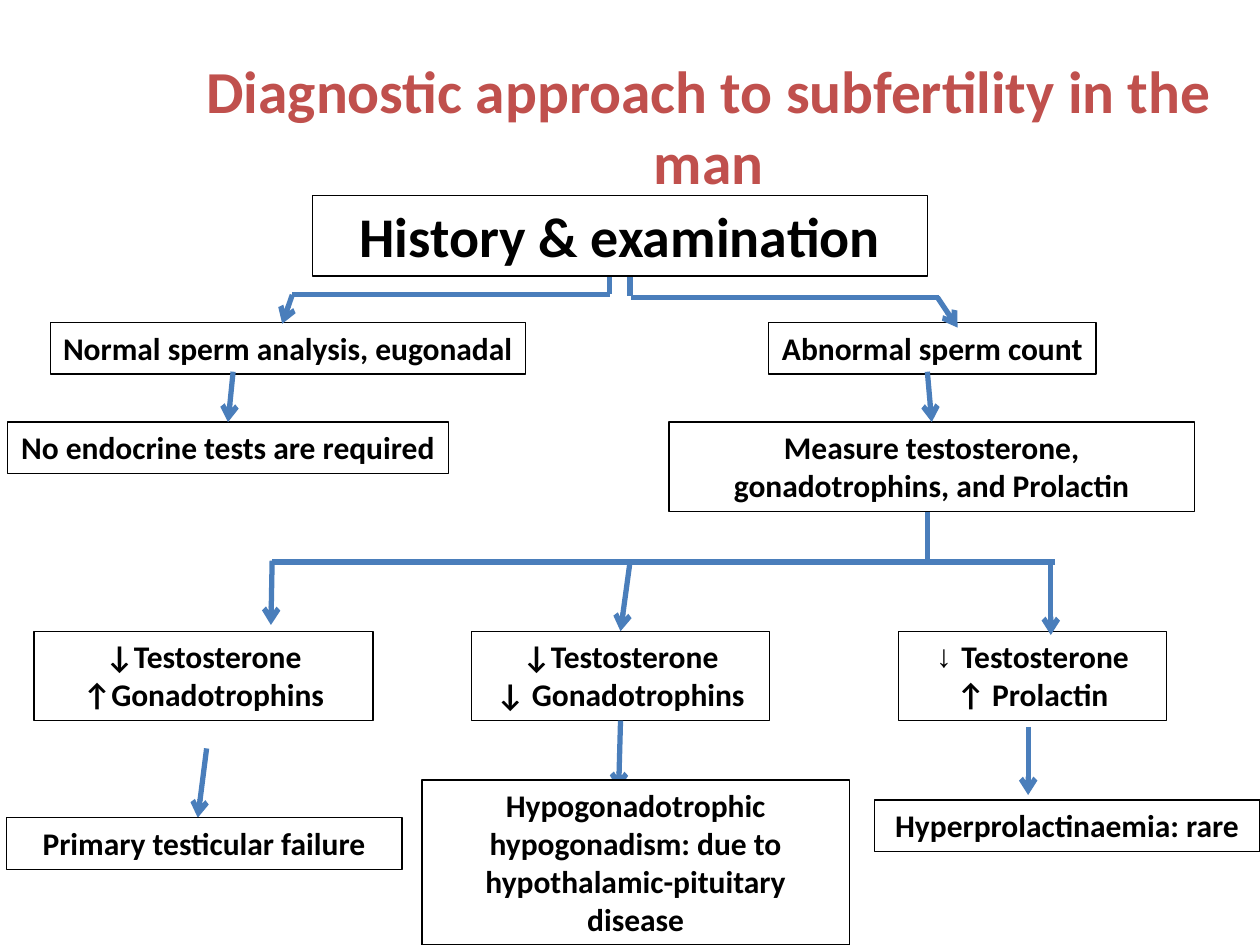
import dataclasses
import typing

import lxml.etree
import pptx
import pptx.dml.color
import pptx.enum.shapes
import pptx.enum.text
import pptx.oxml.ns
import pptx.util

Inches = pptx.util.Inches
Color = pptx.dml.color.RGBColor
Anchor = pptx.enum.text.MSO_ANCHOR
Kind = pptx.enum.shapes
qn = pptx.oxml.ns.qn


@dataclasses.dataclass(frozen=True)
class Theme:
    font: str = "Calibri"
    sign: str = "Arial"
    ink: Color = Color(0, 0, 0)
    paper: Color = Color(255, 255, 255)
    title: Color = Color(0xC0, 0x50, 0x4D)
    line: Color = Color(0x4A, 0x7E, 0xBB)
    head: int = 34
    root: int = 32
    body: int = 18
    edge: float = 0.75
    stroke: float = 3


class Box(typing.NamedTuple):
    key: str
    left: float
    top: float
    width: float
    height: float
    lines: tuple[str, ...]
    size: int
    filled: bool = False
    wrap: bool = True
    bullet: str = ""


class Join(typing.NamedTuple):
    key: str
    side: int


class Link(typing.NamedTuple):
    start: tuple[float, float]
    end: tuple[float, float]
    arrow: bool = True
    source: Join | None = None
    target: Join | None = None


THEME = Theme()
TOP, BOTTOM = 0, 2
ROW_ONE, ROW_TWO, ROW_THREE = 2.56, 3.35, 5.01
SINGLE, DOUBLE = 0.41, 0.71
BODY = THEME.body

STEPS = [
    Box("abnormal", 6.1, ROW_ONE, 2.6, SINGLE, ("Abnormal sperm count",), BODY, wrap=False),
    Box("normal", 0.4, ROW_ONE, 3.77, SINGLE, ("Normal sperm analysis, eugonadal",), BODY, wrap=False),
    Box("no tests", 0.06, ROW_TWO, 3.5, SINGLE, ("No endocrine tests are required",), BODY, wrap=False),
    Box("measure", 5.31, ROW_TWO, 4.17, DOUBLE, ("Measure testosterone, gonadotrophins, and Prolactin",), BODY),
    Box("high", 0.27, ROW_THREE, 2.69, DOUBLE, ("↓Testosterone", "↑Gonadotrophins"), BODY),
    Box("low", 3.74, ROW_THREE, 2.37, DOUBLE, ("↓Testosterone", "↓ Gonadotrophins"), BODY),
    Box("prolactin", 7.13, ROW_THREE, 2.13, DOUBLE, ("Testosterone", "↑ Prolactin"), BODY, bullet="↓"),
]

ENDS = [
    Box("history", 2.48, 1.55, 4.88, 0.64, ("History & examination",), THEME.root, filled=True),
    Box("primary", 0.05, 6.49, 3.14, SINGLE, ("Primary testicular failure",), BODY, filled=True),
    Box("central", 3.35, 6.19, 3.39, 1.31,
        ("Hypogonadotrophic hypogonadism: due to hypothalamic-pituitary disease",), BODY, filled=True),
    Box("rare", 6.94, 6.35, 3.06, SINGLE, ("Hyperprolactinaemia: rare",), BODY, filled=True),
]

LINKS = [
    Link((4.84, 2.02), (4.84, 2.33), arrow=False),
    Link((5, 2.04), (5, 2.35), arrow=False),
    Link((4.84, 2.34), (2.32, 2.34), arrow=False),
    Link((2.32, 2.34), (2.24, 2.57)),
    Link((7.45, 2.36), (5.01, 2.36), arrow=False),
    Link((7.44, 2.36), (7.6, 2.6)),
    Link((1.85, 2.95), (1.81, 3.35), target=Join("no tests", TOP)),
    Link((7.36, 2.95), (7.4, 3.35), target=Join("measure", TOP)),
    Link((7.36, 4.46), (7.36, 4.06), arrow=False),
    Link((2.16, 4.46), (8.37, 4.46), arrow=False),
    Link((2.16, 4.45), (2.15, 4.96)),
    Link((5, 4.46), (4.92, 5.01), target=Join("low", TOP)),
    Link((8.34, 4.47), (8.34, 5.04)),
    Link((1.64, 5.94), (1.57, 6.49)),
    Link((4.93, 5.72), (4.91, 6.27), source=Join("low", BOTTOM)),
    Link((8.16, 5.77), (8.16, 6.31)),
]


def write(frame, lines: tuple[str, ...], size: int, color: Color) -> None:
    for index, line in enumerate(lines):
        para = frame.add_paragraph() if index else frame.paragraphs[0]
        para.alignment = pptx.enum.text.PP_ALIGN.CENTER
        run = para.add_run()
        run.text = line
        run.font.name = THEME.font
        run.font.size = pptx.util.Pt(size)
        run.font.bold = True
        run.font.color.rgb = color


def mark(para, sign: str) -> None:
    props = para._p.get_or_add_pPr()
    props.set("marL", str(Inches(0.2)))
    props.set("indent", str(-Inches(0.2)))
    lxml.etree.SubElement(props, qn("a:buFont")).set("typeface", THEME.sign)
    lxml.etree.SubElement(props, qn("a:buChar")).set("char", sign)


def draw_box(slide, box: Box):
    place = map(Inches, (box.left, box.top, box.width, box.height))
    shape = slide.shapes.add_shape(Kind.MSO_SHAPE.RECTANGLE, *place)
    shape.shadow.inherit = False
    if box.filled:
        shape.fill.solid()
        shape.fill.fore_color.rgb = THEME.paper
    else:
        shape.fill.background()
    shape.line.color.rgb = THEME.ink
    shape.line.width = pptx.util.Pt(THEME.edge)
    frame = shape.text_frame
    frame.word_wrap = box.wrap
    frame.auto_size = pptx.enum.text.MSO_AUTO_SIZE.SHAPE_TO_FIT_TEXT
    frame.vertical_anchor = Anchor.TOP
    write(frame, box.lines, box.size, THEME.ink)
    if box.bullet:
        mark(frame.paragraphs[0], box.bullet)
    return shape


def draw_link(slide, link: Link, shapes: dict) -> None:
    ends = map(Inches, (*link.start, *link.end))
    line = slide.shapes.add_connector(Kind.MSO_CONNECTOR.STRAIGHT, *ends)
    if link.source:
        line.begin_connect(shapes[link.source.key], link.source.side)
    if link.target:
        line.end_connect(shapes[link.target.key], link.target.side)
    line.line.color.rgb = THEME.line
    line.line.width = pptx.util.Pt(THEME.stroke)
    props = line._element.spPr
    if link.arrow:
        lxml.etree.SubElement(props.find(qn("a:ln")), qn("a:tailEnd")).set("type", "arrow")
    lxml.etree.SubElement(props, qn("a:effectLst"))


def draw_title(slide, text: str) -> None:
    place = map(Inches, (1.25, 0.33, 8.75, 1.33))
    frame = slide.shapes.add_textbox(*place).text_frame
    frame.word_wrap = True
    frame.vertical_anchor = Anchor.MIDDLE
    write(frame, (text,), THEME.head, THEME.title)


def main() -> None:
    deck = pptx.Presentation()
    deck.slide_width, deck.slide_height = Inches(10), Inches(7.5)
    slide = deck.slides.add_slide(deck.slide_layouts[6])
    shapes = {box.key: draw_box(slide, box) for box in STEPS}
    for link in LINKS:
        draw_link(slide, link, shapes)
    draw_title(slide, "Diagnostic approach to subfertility in the man")
    for box in ENDS:
        draw_box(slide, box)
    deck.save("out.pptx")


if __name__ == "__main__":
    main()
